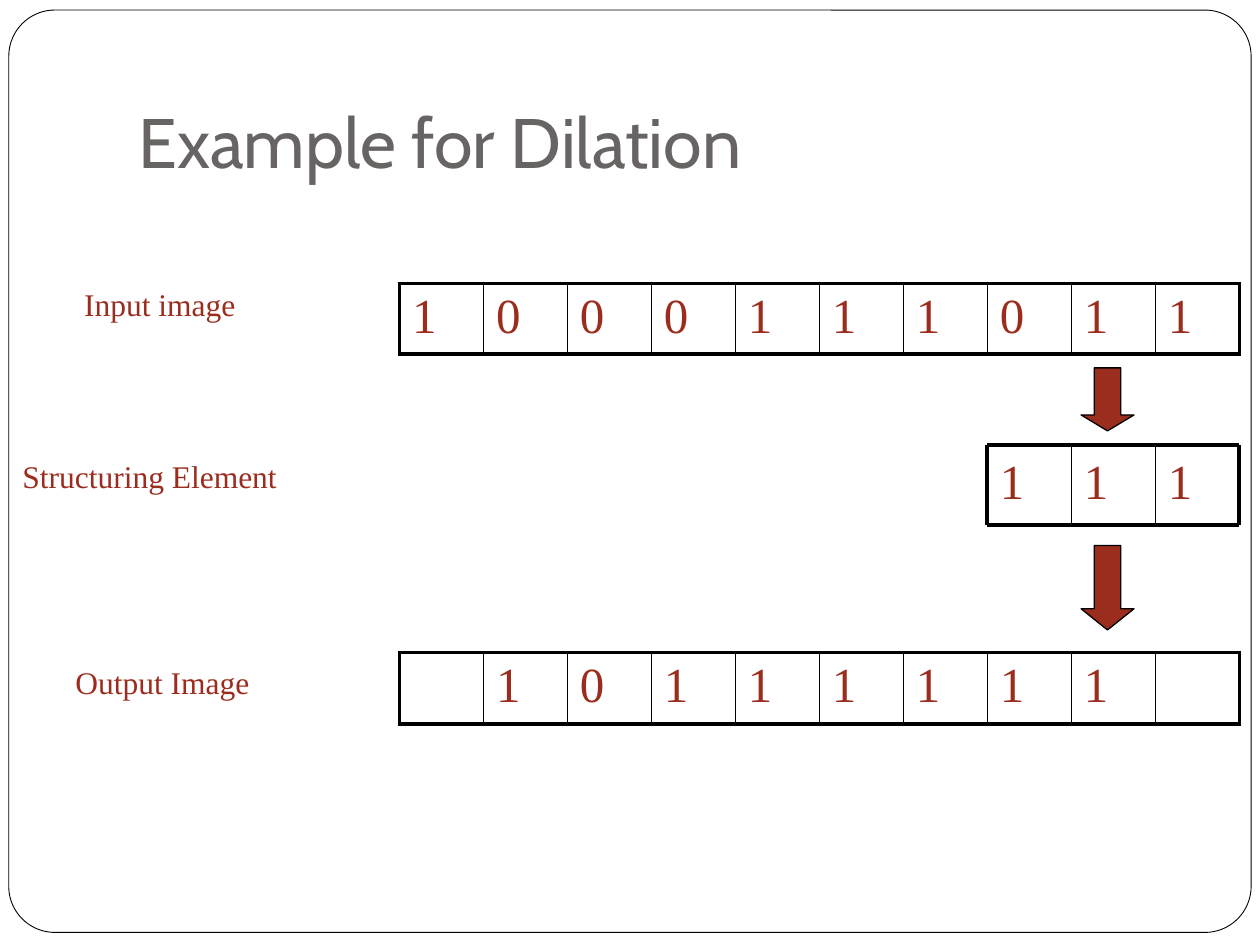
from lxml import etree
from pptx import Presentation, util as u
from pptx.dml.color import RGBColor
from pptx.enum import shapes, text
from pptx.oxml import parse_xml
from pptx.oxml.ns import nsdecls, qn

BLACK = RGBColor(0x00, 0x00, 0x00)
WHITE = RGBColor(0xFF, 0xFF, 0xFF)
GREY = RGBColor(0x69, 0x64, 0x64)
RED = RGBColor(0x9B, 0x2D, 0x1F)

CELL = 2 / 3
GRID_LEFT = 3.17
WINDOW_LEFT = GRID_LEFT + 7 * CELL
THICK, THIN = 2.25, 1


class Deck:
    title_font = {"name": "Cabin", "size": u.Pt(40)}
    label_font = {"name": "Times New Roman", "size": u.Pt(18)}
    digit_font = {"name": "Times New Roman", "size": u.Pt(28)}

    def __init__(self, prs):
        self.s = prs.slides.add_slide(prs.slide_layouts[5])

    def box(self, *lengths):
        return [u.Inches(n) for n in lengths]

    def add_text(self, tf, words, font, color):
        p = tf.paragraphs[0]
        p.alignment = text.PP_ALIGN.LEFT
        r = p.add_run()
        r.text = words
        for name, value in font.items():
            setattr(r.font, name, value)
        r.font.color.rgb = color
        return p

    def digit(self, tf, value):
        p = self.add_text(tf, value, self.digit_font, RED)
        pPr = p._p.get_or_add_pPr()
        before = etree.SubElement(pPr, qn("a:spcBef"))
        etree.SubElement(before, qn("a:spcPct")).set("val", "20000")

    def title(self, words, *at):
        sp = self.s.shapes.title
        for name, value in zip(("left", "top", "width", "height"), self.box(*at)):
            setattr(sp, name, value)
        tf = sp.text_frame
        settings = {
            "auto_size": text.MSO_AUTO_SIZE.NONE,
            "vertical_anchor": text.MSO_ANCHOR.BOTTOM,
            "margin_bottom": u.Inches(0.1),
        }
        for name, value in settings.items():
            setattr(tf, name, value)
        self.add_text(tf, words, self.title_font, GREY)
        sp.element.getparent().append(sp.element)

    def shape(self, kind, at, fill, width, adjust):
        sp = self.s.shapes.add_shape(kind, *self.box(*at))
        sp.shadow.inherit = False
        sp.fill.solid()
        sp.fill.fore_color.rgb = fill
        sp.line.color.rgb = BLACK
        sp.line.width = u.Pt(width)
        for i, value in enumerate(adjust):
            sp.adjustments[i] = value

    def label(self, words, *at):
        tf = self.s.shapes.add_textbox(*self.box(*at)).text_frame
        tf.word_wrap = False
        tf.auto_size = text.MSO_AUTO_SIZE.SHAPE_TO_FIT_TEXT
        self.add_text(tf, words, self.label_font, RED)

    def line(self, x1, y1, x2, y2, width):
        c = self.s.shapes.add_connector(
            shapes.MSO_CONNECTOR.STRAIGHT, *self.box(x1, y1, x2, y2))
        c.line.color.rgb = BLACK
        c.line.width = u.Pt(width)
        etree.SubElement(c._element.spPr, qn("a:effectLst"))

    def border(self, cell, side, width):
        cell._tc.get_or_add_tcPr().append(parse_xml(
            f'<a:ln{side} {nsdecls("a")} w="{u.Pt(width)}"><a:solidFill>'
            f'<a:srgbClr val="{BLACK}"/></a:solidFill></a:ln{side}>'))

    def pixel_row(self, values, top):
        count = len(values)
        frame = self.s.shapes.add_table(
            1, count, *self.box(GRID_LEFT, top, count * CELL, 0.56))
        table = frame.table
        table.first_row = table.horz_banding = False
        for i, value in enumerate(values):
            table.columns[i].width = u.Inches(CELL)
            cell = table.cell(0, i)
            widths = {
                "L": THICK if i == 0 else THIN,
                "R": THICK if i == count - 1 else THIN,
                "T": THICK,
                "B": THICK,
            }
            for side, width in widths.items():
                self.border(cell, side, width)
            cell.fill.background()
            if value:
                self.digit(cell.text_frame, value)

    def window(self, values, left, top, height):
        count = len(values)
        right, bottom = left + count * CELL, top + height
        for i, value in enumerate(values):
            tf = self.s.shapes.add_textbox(
                *self.box(left + i * CELL, top, CELL, height)).text_frame
            tf.word_wrap = True
            self.digit(tf, value)
        for y in (top, bottom):
            self.line(left, y, right, y, THICK)
        for i in range(count + 1):
            x = left + i * CELL
            self.line(x, top, x, bottom, THICK if i in (0, count) else THIN)

    def down_arrow(self, top, height, head):
        self.shape(shapes.MSO_SHAPE.DOWN_ARROW, (8.58, top, 0.42, height),
                   RED, 0.75, (0.5, head))


def main():
    prs = Presentation()
    prs.slide_width, prs.slide_height = u.Inches(10), u.Inches(7.5)
    deck = Deck(prs)
    deck.shape(shapes.MSO_SHAPE.ROUNDED_RECTANGLE, (0.07, 0.08, 9.86, 7.32),
               WHITE, 0.5, (0.05,))
    deck.title("Example for Dilation", 1, 0.3, 8.5, 1.25)
    deck.pixel_row("1000111011", 2.25)
    deck.label("Input image", 0.57, 2.21, 1.8, 0.5)
    deck.label("Structuring Element", 0.08, 3.58, 2.89, 0.5)
    deck.pixel_row(["", *"10111111", ""], 5.18)
    deck.label("Output Image", 0.5, 5.21, 2.04, 0.5)
    deck.window("111", WINDOW_LEFT, 3.53, 0.64)
    deck.down_arrow(4.33, 0.67, 0.4)
    deck.down_arrow(2.92, 0.5, 0.3)
    prs.save("out.pptx")


if __name__ == "__main__":
    main()
